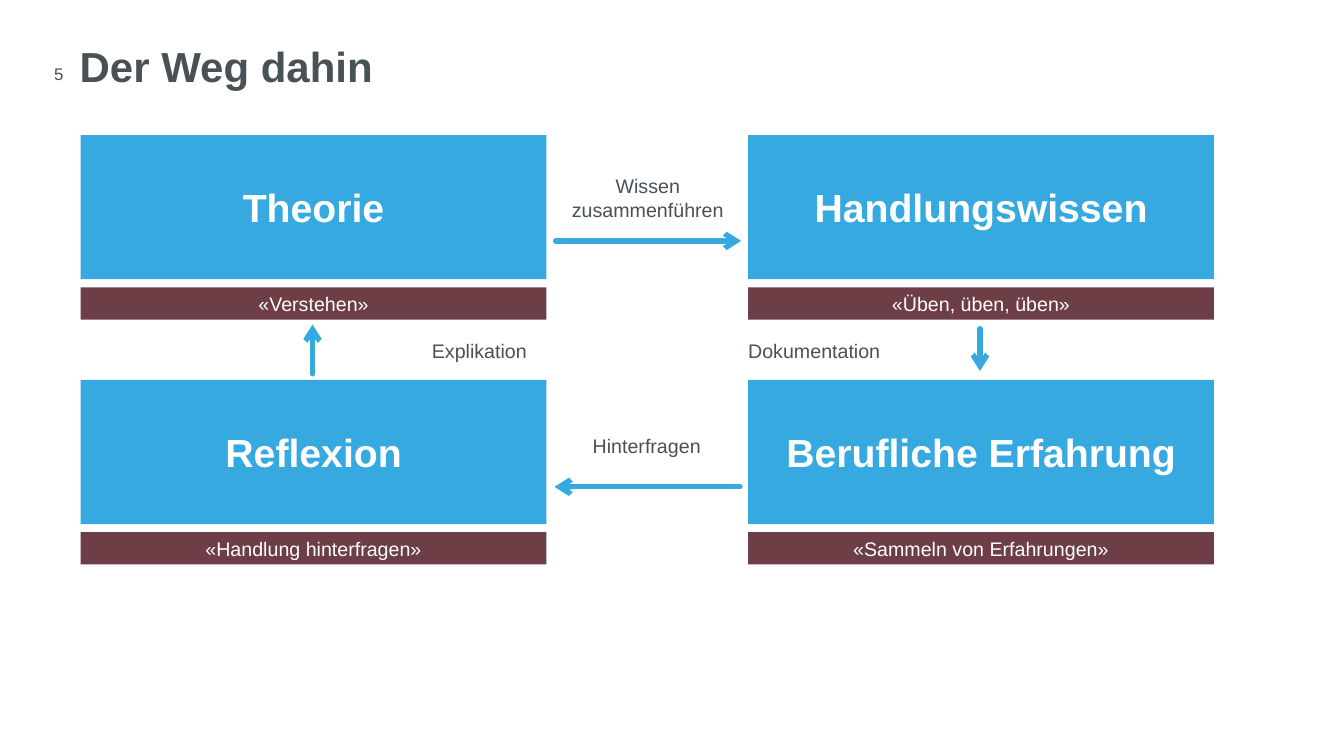
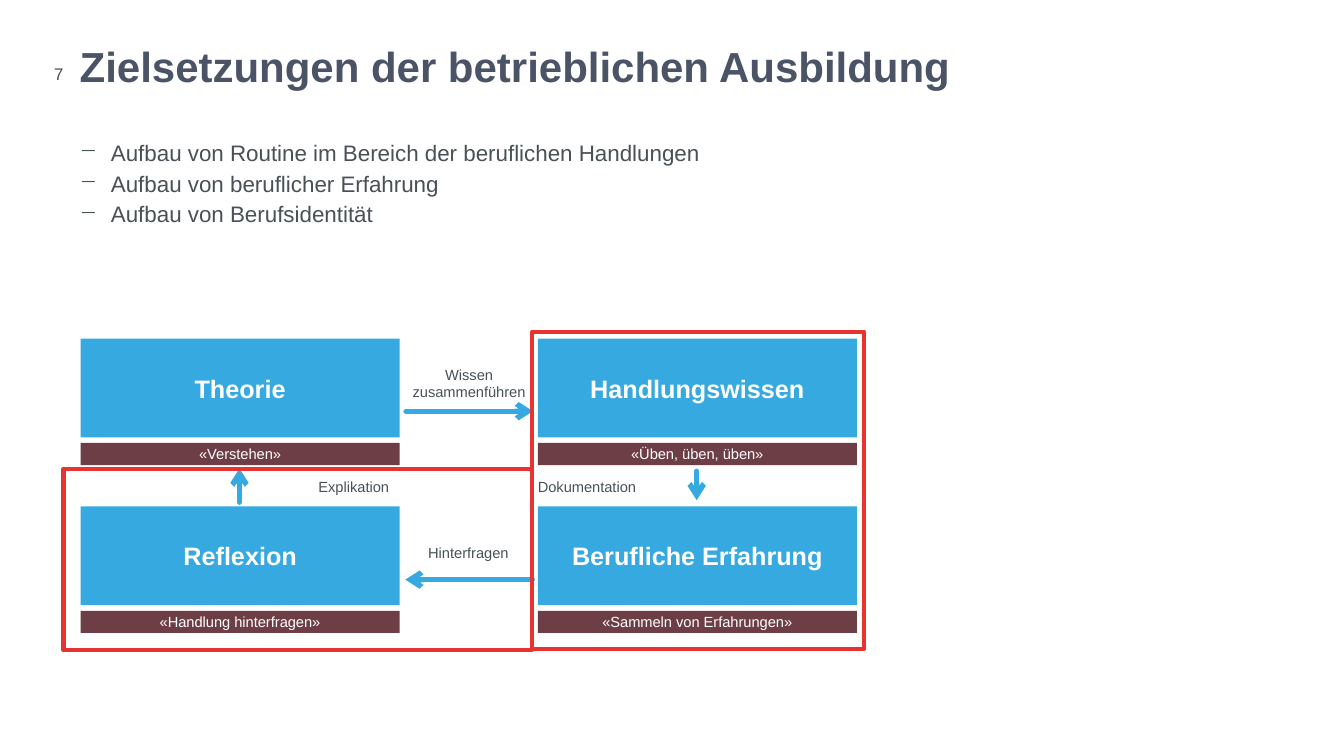
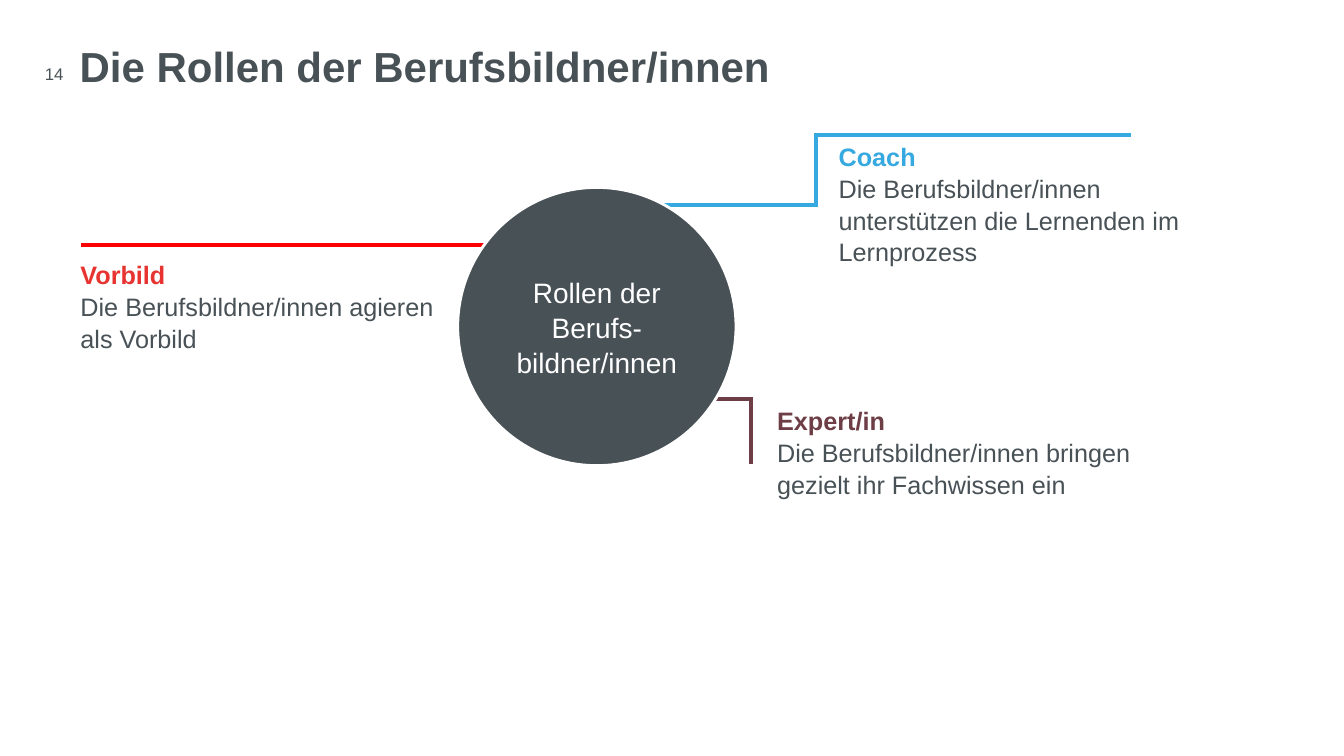
import dataclasses
import itertools

import pptx
import pptx.dml.color
import pptx.enum.shapes
import pptx.enum.text
import pptx.oxml.ns
import pptx.util
from lxml import etree

Inches = pptx.util.Inches
Pt = pptx.util.Pt
SHAPE = pptx.enum.shapes.MSO_SHAPE
STRAIGHT = pptx.enum.shapes.MSO_CONNECTOR.STRAIGHT
ALIGN = pptx.enum.text.PP_ALIGN
ANCHOR = pptx.enum.text.MSO_ANCHOR
qn = pptx.oxml.ns.qn


@dataclasses.dataclass(frozen=True)
class Theme:
    font: str = "Arial"
    ink: str = "485156"
    slate: str = "4A5466"
    white: str = "FFFFFF"
    blue: str = "36A9E1"
    wine: str = "6D3E46"
    red: str = "E73431"
    pure_red: str = "FF0000"
    title: float = 30
    number: float = 12
    bullet: float = 16
    role: float = 18
    hub: float = 20
    arrow_width: float = 3.75
    frame_width: float = 3
    role_width: float = 2.75


THEME = Theme()

STAGES = [
    (0.8, 1.34, "Theorie", "«Verstehen»"),
    (0.8, 3.77, "Reflexion", "«Handlung hinterfragen»"),
    (7.42, 1.34, "Handlungswissen", "«Üben, üben, üben»"),
    (7.42, 3.77, "Berufliche Erfahrung", "«Sammeln von Erfahrungen»"),
]
STAGE_WIDTH, STAGE_HEIGHT = 4.62, 1.43
MOTTO_OFFSET, MOTTO_HEIGHT = 1.51, 0.32
STEPS = [
    ((5.51, 2.39), (7.35, 2.39), (5.44, 1.73, 1.97, 0.47), ALIGN.CENTER, ["Wissen", "zusammenführen"]),
    ((7.34, 4.83), (5.5, 4.83), (5.43, 4.31, 1.97, 0.24), ALIGN.CENTER, ["Hinterfragen"]),
    ((9.72, 3.26), (9.72, 3.68), (7.42, 3.36, 2.08, 0.24), ALIGN.LEFT, ["Dokumentation"]),
    ((3.1, 3.71), (3.1, 3.22), (4.1, 3.36, 1.31, 0.24), ALIGN.CENTER, ["Explikation"]),
]
CYCLE_ORIGIN = (0.8, 1.34)

GOALS = [
    "Aufbau von Routine im Bereich der beruflichen Handlungen",
    "Aufbau von beruflicher Erfahrung",
    "Aufbau von Berufsidentität",
]
GOAL_FRAMES = [(5.28, 3.29, 3.29, 3.15), (0.63, 4.65, 4.65, 1.8)]

ROLES = [
    ("Vorbild", "Die Berufsbildner/innen agieren als Vorbild", (0.7, 2.51, 4.06, 1.57),
     THEME.red, THEME.pure_red, [(0.82, 2.43), (5.09, 2.43)]),
    ("Coach", "Die Berufsbildner/innen unterstützen die Lernenden im Lernprozess", (8.22, 1.34, 4.06, 1.57),
     THEME.blue, THEME.blue, [(5.96, 2.03), (8.09, 2.03), (8.09, 1.34), (11.2, 1.34)]),
    ("Expert/in", "Die Berufsbildner/innen bringen gezielt ihr Fachwissen ein", (7.61, 3.96, 3.96, 1.64),
     THEME.wine, THEME.wine, [(6.07, 3.96), (7.45, 3.96), (7.45, 4.58)]),
]
HUB = "Rollen der Berufs-\nbildner/innen"


def rgb(color):
    return pptx.dml.color.RGBColor.from_string(color)


def add_text(frame, text, *, size, color=THEME.ink, bold=False, align=ALIGN.LEFT, spacing=None, bullet=None):
    paragraph = frame.add_paragraph() if frame.text else frame.paragraphs[0]
    paragraph.text = text
    if bullet:
        properties = paragraph._p.get_or_add_pPr()
        properties.set("marL", str(Inches(0.31)))
        properties.set("indent", str(-Inches(0.31)))
        etree.SubElement(properties, qn("a:buChar")).set("char", bullet)
    paragraph.alignment = align
    if spacing:
        paragraph.line_spacing = spacing
    for run in paragraph.runs:
        run.font.name = THEME.font
        run.font.size = Pt(size)
        run.font.bold = bold
        run.font.color.rgb = rgb(color)


def set_frame(frame, anchor=ANCHOR.TOP, inset=(0, 0)):
    frame.word_wrap = True
    frame.auto_size = pptx.enum.text.MSO_AUTO_SIZE.NONE
    frame.vertical_anchor = anchor
    frame.margin_left = frame.margin_right = Inches(inset[0])
    frame.margin_top = frame.margin_bottom = Inches(inset[1])
    return frame


def add_box(shapes, area, **frame_format):
    return set_frame(shapes.add_textbox(*map(Inches, area)).text_frame, **frame_format)


def add_shape(shapes, kind, area, fill=None, line=None, width=0):
    shape = shapes.add_shape(kind, *map(Inches, area))
    shape.shadow.inherit = False
    if fill:
        shape.fill.solid()
        shape.fill.fore_color.rgb = rgb(fill)
    else:
        shape.fill.background()
    if line:
        shape.line.color.rgb = rgb(line)
        shape.line.width = Pt(width)
    else:
        shape.line.fill.background()
    return shape


def add_line(shapes, start, end, color, width, cap, arrow=False):
    connector = shapes.add_connector(STRAIGHT, *map(Inches, start + end))
    connector.line.color.rgb = rgb(color)
    connector.line.width = Pt(width)
    outline = connector.line._get_or_add_ln()
    outline.set("cap", cap)
    if arrow:
        etree.SubElement(outline, qn("a:tailEnd")).set("type", "arrow")
    etree.SubElement(connector._element.spPr, qn("a:effectLst"))


def add_slide(deck, title, number, color=THEME.ink):
    slide = deck.slides.add_slide(deck.slide_layouts[5])
    heading = slide.shapes.title
    heading.left, heading.top, heading.width, heading.height = map(Inches, (0.79, 0.46, 12.15, 0.63))
    add_text(set_frame(heading.text_frame), title, size=THEME.title, color=color, bold=True, spacing=0.9)
    add_text(add_box(slide.shapes, (0, 0.64, 0.63, 0.19), anchor=ANCHOR.MIDDLE), number,
             size=THEME.number, align=ALIGN.RIGHT)
    return slide


def draw_cycle(shapes, origin, scale, stage_size, label_size):
    def place(x, y):
        return tuple(start + scale * (value - base)
                     for start, value, base in zip(origin, (x, y), CYCLE_ORIGIN))

    def place_area(x, y, width, height):
        return place(x, y) + (scale * width, scale * height)

    for x, y, stage, motto in STAGES:
        for top, height, text, fill, size, bold in (
            (y, STAGE_HEIGHT, stage, THEME.blue, stage_size, True),
            (y + MOTTO_OFFSET, MOTTO_HEIGHT, motto, THEME.wine, label_size, False),
        ):
            bar = add_shape(shapes, SHAPE.RECTANGLE, place_area(x, top, STAGE_WIDTH, height), fill)
            add_text(set_frame(bar.text_frame, ANCHOR.MIDDLE), text, size=size,
                     color=THEME.white, bold=bold, align=ALIGN.CENTER)
    for start, end, label_area, align, lines in STEPS:
        add_line(shapes, place(*start), place(*end), THEME.blue, THEME.arrow_width, "rnd", arrow=True)
        label = add_box(shapes, place_area(*label_area))
        for text in lines:
            add_text(label, text, size=label_size, align=align)


def build_path_slide(deck):
    slide = add_slide(deck, "Der Weg dahin", "5")
    draw_cycle(slide.shapes, CYCLE_ORIGIN, 1, 28, 14)


def build_goals_slide(deck):
    slide = add_slide(deck, "Zielsetzungen der betrieblichen Ausbildung", "7", THEME.slate)
    goals = add_box(slide.shapes, (0.79, 1.34, 12.15, 1.5))
    for goal in GOALS:
        add_text(goals, goal, size=THEME.bullet, spacing=Pt(22), bullet="−")
    draw_cycle(slide.shapes.add_group_shape().shapes, (0.8, 3.36), 0.685, 18, 10.5)
    for area in GOAL_FRAMES:
        add_shape(slide.shapes, SHAPE.RECTANGLE, area, line=THEME.red, width=THEME.frame_width)


def build_roles_slide(deck):
    slide = add_slide(deck, "Die Rollen der Berufsbildner/innen", "14")
    for role, duty, area, color, line_color, corners in ROLES:
        description = add_box(slide.shapes, area, inset=(0.1, 0.05))
        add_text(description, role, size=THEME.role, color=color, bold=True, spacing=1.05)
        add_text(description, duty, size=THEME.role, spacing=1.05)
        for start, end in itertools.pairwise(corners):
            add_line(slide.shapes, start, end, line_color, THEME.role_width, "sq")
    hub = add_shape(slide.shapes, SHAPE.OVAL, (4.54, 1.86, 2.76, 2.76), THEME.ink, THEME.white, 2)
    add_text(set_frame(hub.text_frame, ANCHOR.MIDDLE, (0.1, 0.05)), HUB, size=THEME.hub,
             color=THEME.white, align=ALIGN.CENTER, spacing=1.05)


def main():
    deck = pptx.Presentation()
    deck.slide_width, deck.slide_height = Inches(13.33), Inches(7.5)
    build_path_slide(deck)
    build_goals_slide(deck)
    build_roles_slide(deck)
    deck.save("out.pptx")


if __name__ == "__main__":
    main()
